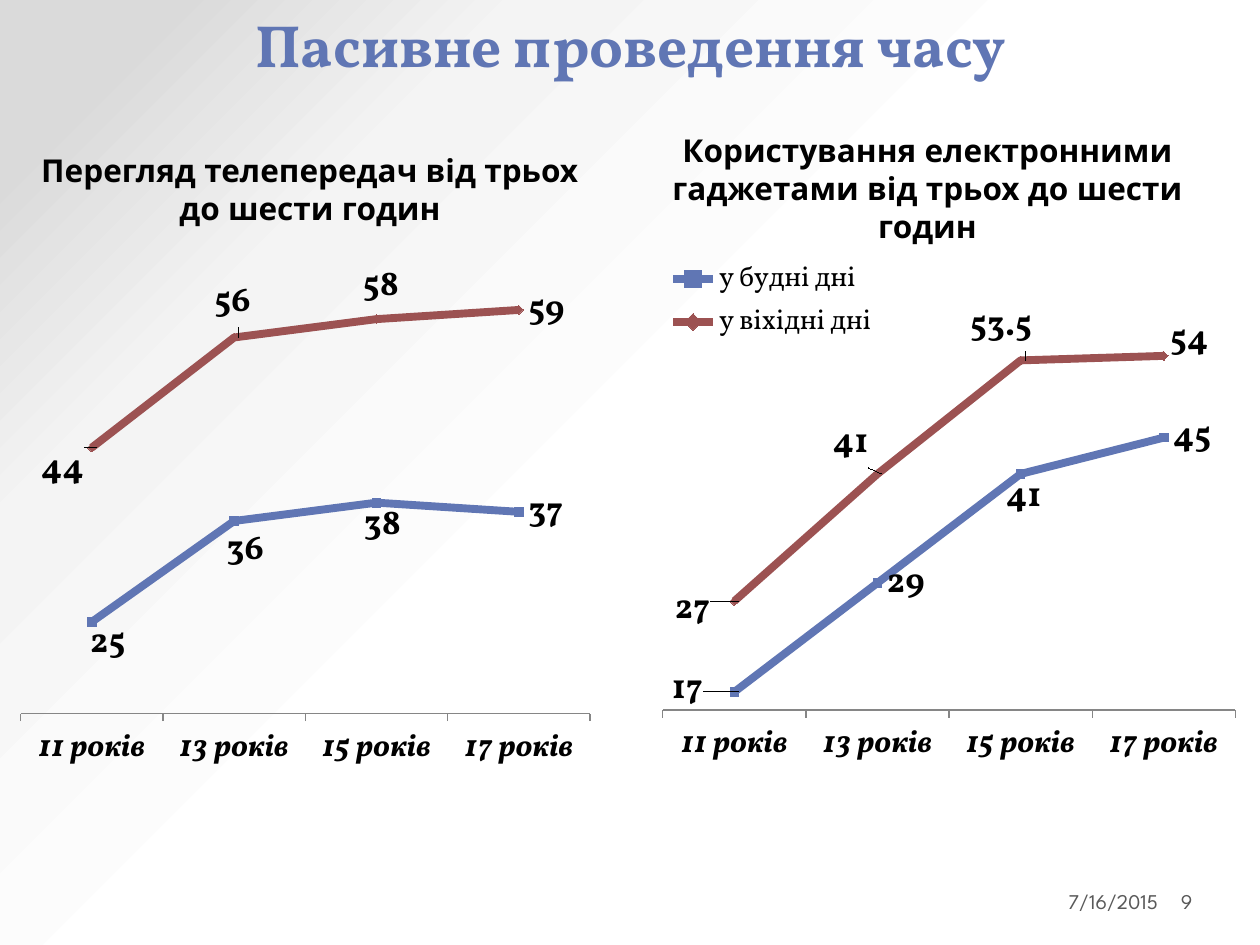
from pptx import Presentation
from pptx.chart.data import CategoryChartData
from pptx.dml.color import RGBColor
from pptx.enum.chart import XL_CHART_TYPE, XL_LABEL_POSITION, XL_LEGEND_POSITION, XL_MARKER_STYLE, XL_TICK_LABEL_POSITION, XL_TICK_MARK
from pptx.enum.text import MSO_ANCHOR, PP_ALIGN
from pptx.oxml import parse_xml
from pptx.oxml.ns import nsdecls, qn
from pptx.util import Emu, Pt

SERIF, SANS = "Vollkorn", "League Spartan"
BLUE, RED, BLACK, GREY, AXIS = "6076B4", "9C5252", "000000", "595959", "868686"
AGES = ["11 років", "13 років", "15 років", "17 років"]
MARKERS = [(BLUE, XL_MARKER_STYLE.SQUARE), (RED, XL_MARKER_STYLE.DIAMOND)]
BACKGROUND = [(50, "FFFFFF"), (76, "F4F4F4"), (92, "DADADA")]

TEXTS = [
    ("Пасивне проведення часу", (64, 0, 1134, 86),
     dict(font=SERIF, size=34, color=BLUE, bold=True, anchor=MSO_ANCHOR.BOTTOM)),
    ("Користування електронними гаджетами від трьох до шести годин", (620, 125, 615, 764),
     dict(size=18, bold=True, before=3.6)),
    ("Перегляд телепередач від трьох до шести годин", (5, 145, 610, 735),
     dict(size=18, bold=True, before=3.6)),
    ("7/16/2015", (877, 876, 287, 50),
     dict(size=12, color=GREY, align=PP_ALIGN.RIGHT, anchor=MSO_ANCHOR.MIDDLE, margins=(13, 6))),
    ("9", (1177, 876, 77, 50),
     dict(size=12, color=GREY, align=PP_ALIGN.LEFT, anchor=MSO_ANCHOR.MIDDLE, margins=(4, 6))),
]

CHARTS = [
    dict(box=(660, 255, 576, 535), plot=(0.005, 0.002, 0.995, 0.849), legend=(0.01, 0, 0.37, 0.17),
         series=[("у будні дні", [17, 29, 41, 45], [(-72, -3), (0, 0), (-24, 23), (0, 0)]),
                 ("у віхідні дні", [27, 41, 53.5, 54], [(-69, 8), (-54, -31), (-60, -34), (-3, -16)])]),
    dict(box=(0, 255, 606, 525), plot=(0.034, 0, 0.94, 0.874), legend=None,
         series=[("Series 1", [25, 36, 38, 37], [(-11, 21), (-17, 29), (-22, 23), (0, 0)]),
                 ("Series 2", [44, 56, 58, 59], [(-60, 22), (-29, -35), (-23, -33), (0, 0)])]),
]


def px(length):
    return Emu(round(length * 914400 / 126))


def rgb(color):
    return RGBColor.from_string(color)


def style(font, size, name=SERIF, color=BLACK, bold=False, italic=False):
    font.name, font.size, font.bold, font.italic = name, Pt(size), bold, italic
    font.color.rgb = rgb(color)


def add_text(page, text, place, size, font=SANS, color=BLACK, bold=False, before=0,
             align=PP_ALIGN.CENTER, anchor=MSO_ANCHOR.TOP, margins=(13, 13)):
    box = page.shapes.add_textbox(*map(px, place))
    frame = box.text_frame
    frame.word_wrap = True
    frame.vertical_anchor = anchor
    frame.margin_left, frame.margin_right = map(px, margins)
    para = frame.paragraphs[0]
    para.alignment, para.space_before = align, Pt(before)
    span = para.add_run()
    span.text = text
    style(span.font, size, font, color, bold)


def set_layout(parent, index, values, modes=""):
    for old in parent.findall(qn("c:layout")):
        parent.remove(old)
    items = "".join(f'<c:{tag} val="{value:.4f}"/>' for tag, value in zip("xywh", values))
    parent.insert(index, parse_xml(
        f'<c:layout {nsdecls("c")}><c:manualLayout>{modes}{items}</c:manualLayout></c:layout>'))


def add_series_format(series, color, marker, offsets, width, height):
    series.smooth = False
    series.format.line.color.rgb = rgb(color)
    series.format.line.width = Pt(4.5)
    series.marker.style, series.marker.size = marker, 5
    series.marker.format.fill.solid()
    series.marker.format.fill.fore_color.rgb = rgb(color)
    series.marker.format.line.color.rgb = rgb(color)
    labels = series.data_labels
    labels.show_value = True
    labels.position = XL_LABEL_POSITION.RIGHT
    style(labels.font, 20, bold=True)
    moved = [(index, offset) for index, offset in enumerate(offsets) if any(offset)]
    for index, _ in moved:
        label = series.points[index].data_label
        label.position = XL_LABEL_POSITION.RIGHT
        style(label.font, 20, bold=True)
    for element, (_, (right, down)) in zip(series._element.xpath(".//c:dLbl"), moved):
        set_layout(element, 1, (right / width, down / height))


def add_line_chart(page, box, plot, legend, series):
    data = CategoryChartData()
    data.categories = AGES
    for name, values, _ in series:
        data.add_series(name, values)
    chart = page.shapes.add_chart(XL_CHART_TYPE.LINE_MARKERS, *map(px, box), data).chart
    style(chart.font, 10)
    chart.has_title = False
    chart.plots[0].vary_by_categories = False
    ages, scale = chart.category_axis, chart.value_axis
    ages.major_tick_mark = XL_TICK_MARK.OUTSIDE
    ages.tick_label_position = XL_TICK_LABEL_POSITION.LOW
    ages.format.line.color.rgb = rgb(AXIS)
    style(ages.tick_labels.font, 18, bold=True, italic=True)
    scale.minimum_scale, scale.maximum_scale, scale.major_unit = 15, 65, 10
    scale.has_major_gridlines = scale.visible = False
    edges = '<c:xMode val="edge"/><c:yMode val="edge"/>'
    area = chart._chartSpace.xpath(".//c:plotArea")[0]
    set_layout(area, 0, plot, '<c:layoutTarget val="inner"/>' + edges)
    chart.has_legend = legend is not None
    if legend:
        chart.legend.position = XL_LEGEND_POSITION.RIGHT
        chart.legend.include_in_layout = False
        style(chart.legend.font, 16)
        set_layout(chart._chartSpace.xpath(".//c:legend")[0], 1, legend, edges)
    for line, (_, _, offsets), (color, marker) in zip(chart.plots[0].series, series, MARKERS):
        add_series_format(line, color, marker, offsets, *box[2:])


def set_background(page):
    stops = "".join(f'<a:gs pos="{place * 1000}"><a:srgbClr val="{color}"/></a:gs>'
                    for place, color in BACKGROUND)
    page._element.cSld.insert(0, parse_xml(
        f'<p:bg {nsdecls("p", "a")}><p:bgPr><a:gradFill rotWithShape="1"><a:gsLst>{stops}</a:gsLst>'
        '<a:path path="circle"><a:fillToRect l="100000" t="100000"/></a:path>'
        '</a:gradFill><a:effectLst/></p:bgPr></p:bg>'))


def main():
    """Build the slide about passive leisure time."""
    deck = Presentation()
    deck.slide_width, deck.slide_height = px(1260), px(945)
    page = deck.slides.add_slide(deck.slide_layouts[6])
    set_background(page)
    for text, place, look in TEXTS[:3]:
        add_text(page, text, place, **look)
    for chart in CHARTS:
        add_line_chart(page, **chart)
    for text, place, look in TEXTS[3:]:
        add_text(page, text, place, **look)
    deck.save("out.pptx")


if __name__ == "__main__":
    main()
